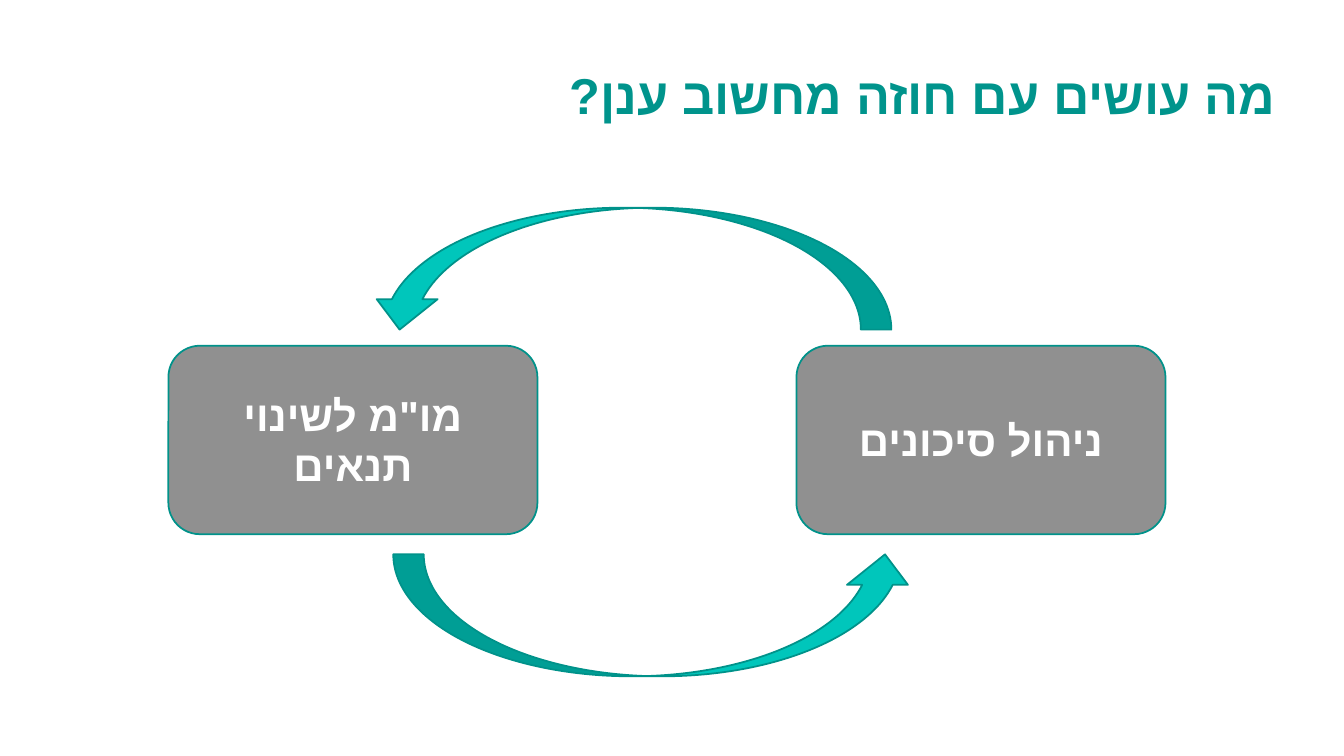
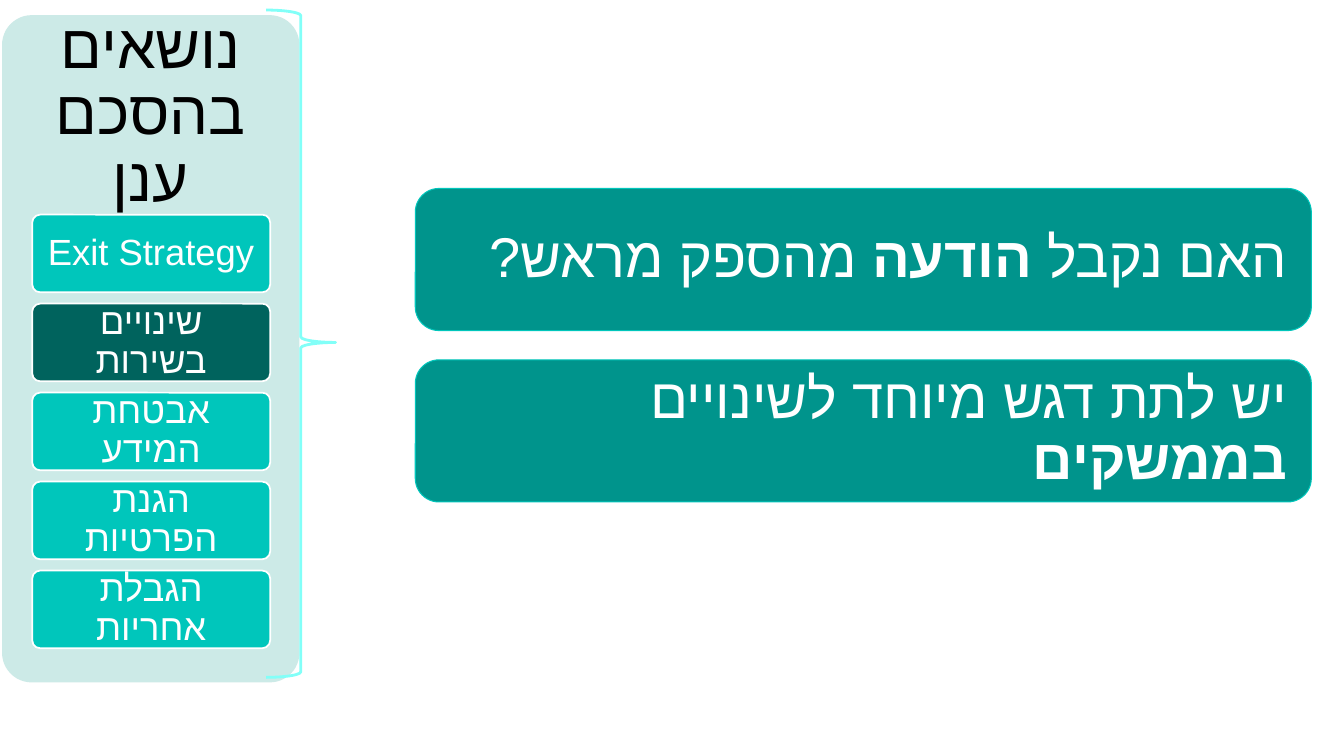
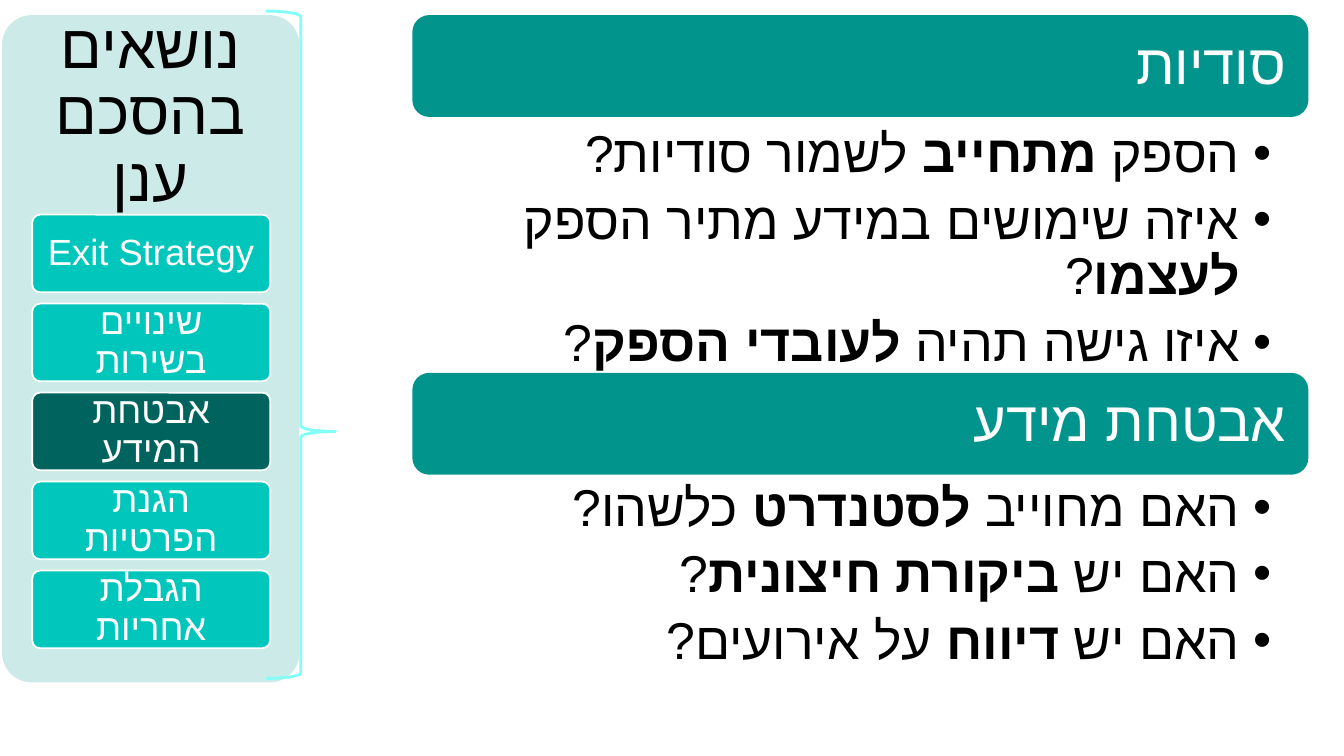
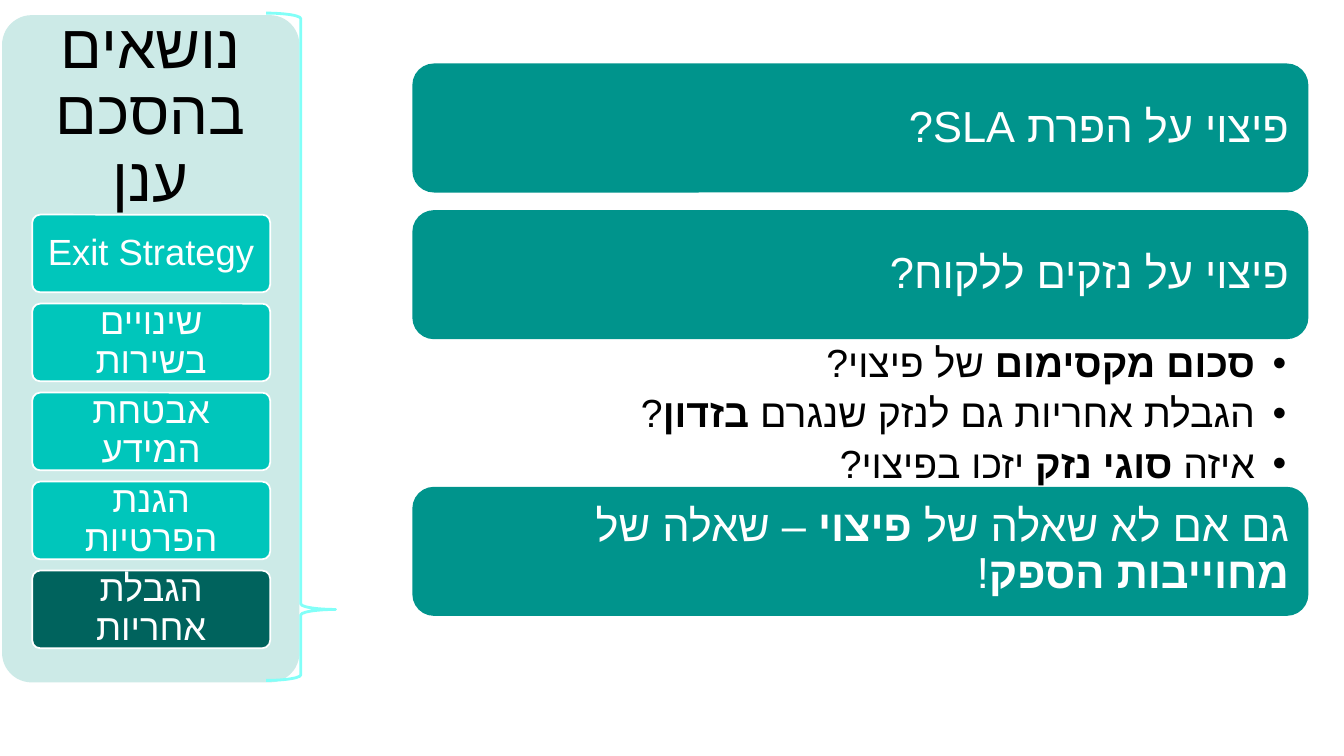
"""Build four right-to-left slides about cloud agreements."""
from lxml import etree
from pptx import Presentation, util as u
from pptx.dml.color import RGBColor
from pptx.enum import shapes, text
from pptx.oxml import ns

TEAL, AQUA, DEEP, PALE, EDGE = "00948C", "00C6BB", "00635D", "CCEAE7", "00928A"
BRACE, GREY, WHITE, BLACK = "82FFF8", "909090", "FFFFFF", "000000"
ROUNDED = shapes.MSO_SHAPE.ROUNDED_RECTANGLE
RIGHT, CENTER = text.PP_ALIGN.RIGHT, text.PP_ALIGN.CENTER
TOP, MIDDLE, BOTTOM = (text.MSO_ANCHOR.TOP, text.MSO_ANCHOR.MIDDLE,
                       text.MSO_ANCHOR.BOTTOM)
TOPICS = ["Exit Strategy", "שינויים בשירות", "אבטחת המידע", "הגנת הפרטיות",
          "הגבלת אחריות"]


def color(value):
    """Turn a hex string into a colour."""
    return RGBColor.from_string(value)


class Deck:
    """Hold the style and the current slide; lengths are percent of the slide."""

    font = "Arial"
    bar_left, bar_width = 30.68, 66.67
    panel = (0.15, 2, 22.13, 88.27)
    button_top, button_pitch, button_height = 28.4, 11.77, 10.27

    def __init__(self):
        """Open an empty widescreen presentation."""
        self.presentation = Presentation()
        self.presentation.slide_width = u.Inches(13.33)
        self.presentation.slide_height = u.Inches(7.5)
        self.slide = None

    def add_slide(self, layout):
        """Start a slide from the layout with this number."""
        layouts = self.presentation.slide_layouts
        self.slide = self.presentation.slides.add_slide(layouts[layout])

    def box(self, left, top, width, height):
        """Turn percent shares into slide lengths."""
        across, down = self.presentation.slide_width, self.presentation.slide_height
        return [round(share * side / 100) for share, side in
                zip((left, top, width, height), (across, down, across, down))]

    def shape(self, kind, box, fill=None, line=None, weight=1.25):
        """Draw a preset shape."""
        shape = self.slide.shapes.add_shape(kind, *self.box(*box))
        shape.shadow.inherit = False
        if fill:
            shape.fill.solid()
            shape.fill.fore_color.rgb = color(fill)
        else:
            shape.fill.background()
        if line:
            shape.line.color.rgb = color(line)
            shape.line.width = u.Pt(weight)
        else:
            shape.line.fill.background()
        return shape

    def place(self, placeholder, box):
        """Move a placeholder."""
        (placeholder.left, placeholder.top,
         placeholder.width, placeholder.height) = self.box(*box)
        return placeholder

    def set_text(self, shape, lines, size, fill=WHITE, align=RIGHT, anchor=MIDDLE,
                 insets=(0.1, 0.05, 0.1, 0.05), spacing=0.9, bullets=False,
                 bold=False):
        """Fill a shape with right-to-left lines; asterisks enclose bold words."""
        frame = shape.text_frame
        frame.word_wrap = True
        frame.auto_size = text.MSO_AUTO_SIZE.NONE
        frame.vertical_anchor = anchor
        (frame.margin_left, frame.margin_top,
         frame.margin_right, frame.margin_bottom) = map(u.Inches, insets)
        for number, line in enumerate(lines):
            paragraph = frame.add_paragraph() if number else frame.paragraphs[0]
            properties = paragraph._p.get_or_add_pPr()
            properties.set("rtl", "1")
            if bullets:
                properties.set("marL", str(u.Inches(0.31)))
                properties.set("indent", str(u.Inches(-0.31)))
                etree.SubElement(properties, ns.qn("a:buChar"), char="•")
            paragraph.alignment = align
            paragraph.line_spacing = spacing
            paragraph.space_before = u.Pt(0)
            paragraph.space_after = u.Pt(size * 0.2 if bullets else 0)
            for part, words in enumerate(line.split("*")):
                if words:
                    run = paragraph.add_run()
                    run.text = words
                    run.font.size = u.Pt(size)
                    run.font.bold = bold or part % 2 == 1
                    run.font.color.rgb = color(fill)
                    run.font.name = self.font
                    etree.SubElement(run.font._element, ns.qn("a:cs"),
                                     typeface=self.font)

    def title(self, words):
        """Set the shadowed title and drop the unused subtitle."""
        title = self.place(self.slide.shapes.title, (0, 7.73, 95.7, 9.47))
        self.set_text(title, [words], 36, TEAL, anchor=BOTTOM, spacing=1, bold=True)
        properties = title.text_frame.paragraphs[0].runs[0].font._element
        effects = etree.Element(ns.qn("a:effectLst"))
        shadow = etree.SubElement(effects, ns.qn("a:outerShdw"), blurRad="38100",
                                  dist="38100", dir="2700000", algn="tl")
        tint = etree.SubElement(shadow, ns.qn("a:srgbClr"), val=BLACK)
        etree.SubElement(tint, ns.qn("a:alpha"), val="43000")
        properties.find(ns.qn("a:solidFill")).addnext(effects)
        subtitle = self.slide.placeholders[1].element
        subtitle.getparent().remove(subtitle)

    def card(self, left, words):
        """Draw a grey card of the cycle."""
        card = self.shape(ROUNDED, (left, 45.73, 27.46, 24.93), GREY, EDGE)
        self.set_text(card, [words], 30, align=CENTER, spacing=1, bold=True)

    def arrow(self, left, top, rotation=0):
        """Draw a curved arrow of the cycle."""
        arrow = self.shape(shapes.MSO_SHAPE.CURVED_UP_ARROW,
                           (left, top, 38.86, 16.13), AQUA, EDGE)
        arrow.rotation = rotation

    def bar(self, top, height, words, size=40, inset=0.17, left=bar_left, line=None):
        """Draw a teal heading bar."""
        bar = self.shape(ROUNDED, (left, top, self.bar_width, height), TEAL, line, 0.75)
        self.set_text(bar, [words], size, insets=[inset] * 4)

    def bullets(self, index, top, height, lines, size, right, edge):
        """Fill a body placeholder with a bulleted list."""
        body = self.place(self.slide.placeholders[index],
                          (self.bar_left, top, self.bar_width, height))
        self.set_text(body, lines, size, BLACK, anchor=TOP,
                      insets=(0.28, edge, right, edge), bullets=True)

    def sidebar(self, current, brace_top):
        """Draw the topic panel and a brace that points at the current topic."""
        left, top, width, height = self.panel
        panel = self.shape(ROUNDED, self.panel, PALE)
        panel.adjustments[0] = 0.1
        title = self.place(self.slide.shapes.title, (left, top, width, 26.4))
        self.set_text(title, ["נושאים בהסכם ענן"], 44, BLACK, CENTER,
                      insets=[0.18] * 4)
        panel.element.addnext(title.element)
        for number, topic in enumerate(TOPICS):
            button = self.shape(
                ROUNDED, (2.4, self.button_top + number * self.button_pitch, 17.7,
                          self.button_height),
                DEEP if number == current else AQUA, WHITE)
            button.adjustments[0] = 0.1
            self.set_text(button, [topic], 26, align=CENTER,
                          insets=(0.07, 0.05, 0.07, 0.05))
        brace = self.shape(shapes.MSO_SHAPE.RIGHT_BRACE,
                           (19.8, brace_top, 5.17, height), line=BRACE, weight=2)
        middle = (self.button_top + current * self.button_pitch
                  + self.button_height / 2)
        brace.adjustments[0] = 0.08
        brace.adjustments[1] = (middle - brace_top) / height


def main():
    """Build and save the slides."""
    deck = Deck()

    deck.add_slide(0)
    deck.title("מה עושים עם חוזה מחשוב ענן?")
    deck.card(59.26, "ניהול סיכונים")
    deck.card(12.53, 'מו"מ לשינוי תנאים')
    deck.arrow(29.26, 73.33)
    deck.arrow(27.46, 27.47, 180)

    deck.add_slide(5)
    for top, words in ((24.93, "האם נקבל *הודעה* מהספק מראש?"),
                       (47.6, "יש לתת דגש מיוחד לשינויים *בממשקים*")):
        deck.bar(top, 18.8, words, left=30.9, line=AQUA)
    deck.sidebar(1, 1.33)

    deck.add_slide(3)
    sections = (
        (1, 2, 16, 33.33, "סודיות",
         ["הספק *מתחייב* לשמור סודיות?",
          "איזה שימושים במידע מתיר הספק *לעצמו*?",
          "איזו גישה תהיה *לעובדי הספק*?"]),
        (2, 49.33, 62.8, 26.8, "אבטחת מידע",
         ["האם מחוייב *לסטנדרט* כלשהו?",
          "האם יש *ביקורת חיצונית*?",
          "האם יש *דיווח* על אירועים?"]))
    for index, top, list_top, list_height, heading, lines in sections:
        deck.bar(top, 13.47, heading)
        deck.bullets(index, list_top, list_height, lines, 37, 0.37, 0.07)
    deck.sidebar(2, 1.47)

    deck.add_slide(1)
    for top, words in ((8.4, "פיצוי על הפרת SLA?"),
                       (27.8, "פיצוי על נזקים ללקוח?"),
                       (64.4, "גם אם לא שאלה של *פיצוי* – שאלה של *מחוייבות הספק*!")):
        deck.bar(top, 17.07, words, 31, 0.13)
    deck.bullets(1, 44.93, 19.6,
                 ["*סכום מקסימום *של פיצוי?",
                  "הגבלת אחריות גם לנזק שנגרם *בזדון*?",
                  "איזה *סוגי נזק *יזכו בפיצוי?"], 28, 0.22, 0.04)
    deck.sidebar(4, 1.73)

    deck.presentation.save("out.pptx")


if __name__ == "__main__":
    main()
